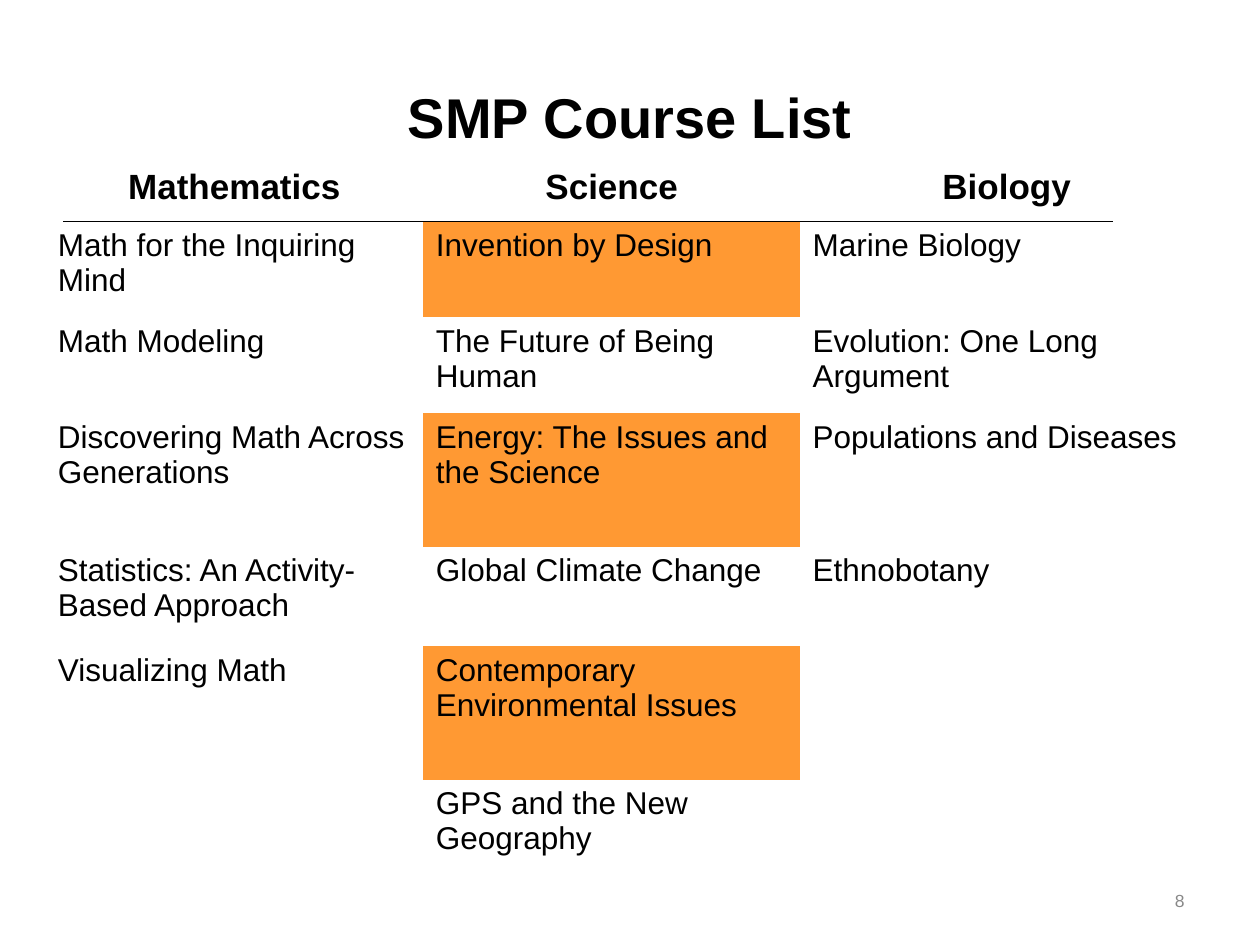
import pptx
import pptx.dml.color
import pptx.enum.shapes
import pptx.enum.text
import pptx.oxml.ns
import pptx.util
from lxml import etree

Inches = pptx.util.Inches
ALIGN = pptx.enum.text.PP_ALIGN
COLORS = {"text": "000000", "highlight": "FF9933", "paper": "FFFFFF", "number": "898989"}
NO_GRID_STYLE = "{2D5ABB26-0587-4C30-8999-92F81FD0307C}"

COURSES = [
    ("Mathematics", "Science", "Biology"),
    ("Math for the Inquiring Mind", "Invention by Design", "Marine Biology"),
    ("Math Modeling", "The Future of Being Human", "Evolution: One Long Argument"),
    ("Discovering Math Across Generations", "Energy: The Issues and the Science",
     "Populations and Diseases"),
    ("Statistics: An Activity-Based Approach", "Global Climate Change", "Ethnobotany"),
    ("Visualizing Math", "Contemporary Environmental Issues", ""),
    ("", "GPS and the New Geography", ""),
]
COLUMN_WIDTHS = (3, 2.99, 3.28)
ROW_HEIGHTS = (0.48, 0.76, 0.76, 1.06, 0.79, 1.06, 0.76)
SCIENCE = 1
CELL_FILLS = {(row, SCIENCE): "highlight" for row in (1, 3, 5)} | {(4, SCIENCE): "paper"}


def rgb(name):
    return pptx.dml.color.RGBColor.from_string(COLORS[name])


def write(frame, text, size, align=ALIGN.LEFT, bold=False, color="text"):
    frame.text = text
    paragraph = frame.paragraphs[0]
    paragraph.alignment = align
    for font in [paragraph.font] + [run.font for run in paragraph.runs]:
        font.name = "Arial"
        font.size = pptx.util.Pt(size)
        font.bold = bold
        font.color.rgb = rgb(color)


def add_title(slide, left, top, width, height):
    title = slide.shapes.title
    title.left, title.top = Inches(left), Inches(top)
    title.width, title.height = Inches(width), Inches(height)
    write(title.text_frame, "SMP Course List", 32, ALIGN.CENTER, True)
    title.text_frame.vertical_anchor = pptx.enum.text.MSO_ANCHOR.MIDDLE


def add_slide_number(slide, left, top, width, height):
    number = slide.shapes.add_textbox(*map(Inches, (left, top, width, height)))
    number.text_frame.word_wrap = True
    number.text_frame.vertical_anchor = pptx.enum.text.MSO_ANCHOR.MIDDLE
    write(number.text_frame, "8", 10, ALIGN.RIGHT, color="number")


def add_course_table(slide, left, top):
    box = (left, top, sum(COLUMN_WIDTHS), sum(ROW_HEIGHTS))
    frame = slide.shapes.add_table(len(COURSES), len(COLUMN_WIDTHS), *map(Inches, box))
    table = frame.table
    table.first_row = table.horz_banding = False
    style = frame._element.find(".//" + pptx.oxml.ns.qn("a:tableStyleId"))
    style.text = NO_GRID_STYLE
    for column, width in zip(table.columns, COLUMN_WIDTHS):
        column.width = Inches(width)
    for r, (courses, height) in enumerate(zip(COURSES, ROW_HEIGHTS)):
        table.rows[r].height = Inches(height)
        for c, course in enumerate(courses):
            cell = table.cell(r, c)
            if r == 0:
                write(cell.text_frame, course, 20, ALIGN.CENTER, True)
            else:
                write(cell.text_frame, course, 18)
            if (r, c) in CELL_FILLS:
                cell.fill.solid()
                cell.fill.fore_color.rgb = rgb(CELL_FILLS[r, c])
            else:
                cell.fill.background()


def add_header_rule(slide, left, y, width):
    rule = slide.shapes.add_connector(
        pptx.enum.shapes.MSO_CONNECTOR.STRAIGHT,
        Inches(left), Inches(y), Inches(left + width), Inches(y))
    rule.line.color.rgb = rgb("text")
    rule.line.width = pptx.util.Pt(0.75)
    etree.SubElement(rule._element.spPr, pptx.oxml.ns.qn("a:effectLst"))


def main():
    deck = pptx.Presentation()
    deck.slide_width, deck.slide_height = Inches(10), Inches(7.5)
    slide = deck.slides.add_slide(deck.slide_layouts[5])
    table_top = 1.28
    add_title(slide, 0.5, 0.3, 9, 1.25)
    add_slide_number(slide, 7.17, 6.95, 2.33, 0.4)
    add_course_table(slide, 0.36, table_top)
    add_header_rule(slide, 0.5, table_top + ROW_HEIGHTS[0], 8.33)
    deck.save("out.pptx")


if __name__ == "__main__":
    main()
